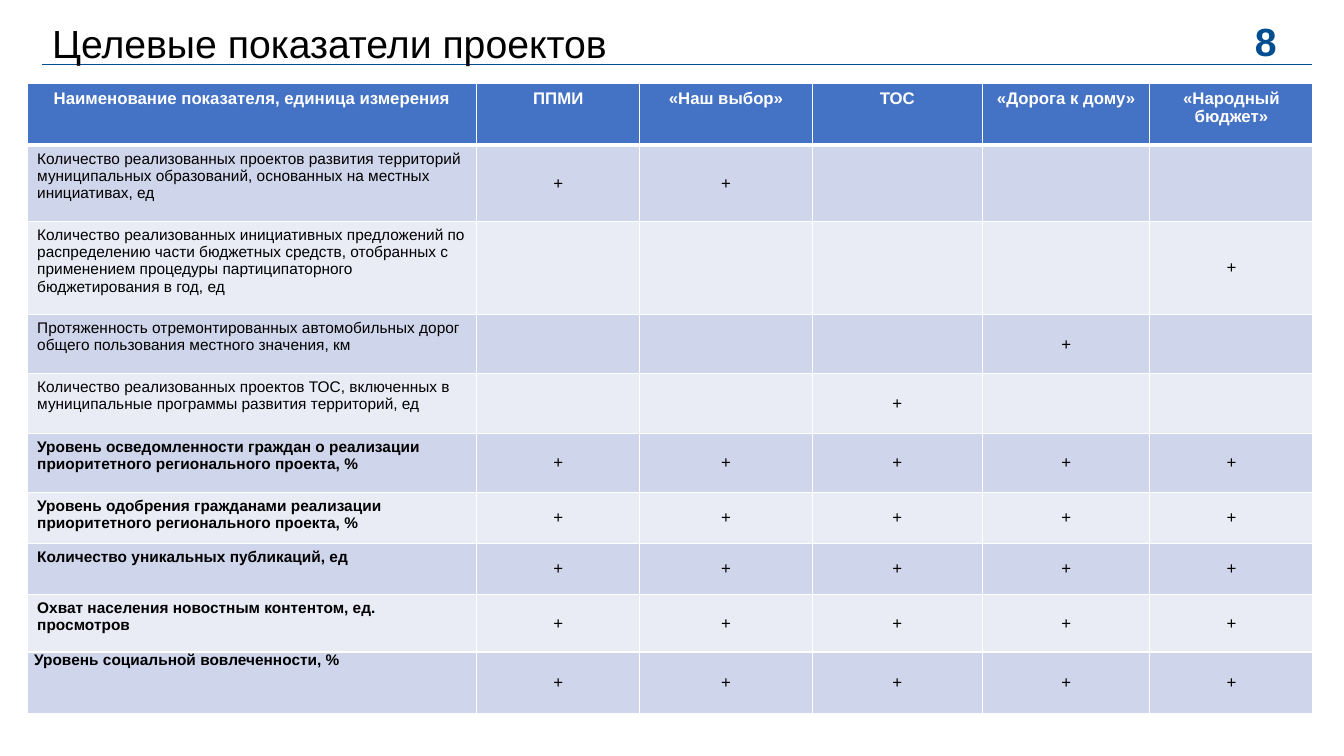
from lxml.etree import SubElement
from pptx import Presentation
from pptx.dml.color import RGBColor
from pptx.enum.shapes import MSO_CONNECTOR
from pptx.enum.text import MSO_ANCHOR, PP_ALIGN
from pptx.oxml import parse_xml
from pptx.oxml.ns import nsdecls, qn
from pptx.util import Pt

FONT = "Arial"
NAVY, BLACK, WHITE = "004E90", "000000", "FFFFFF"
HEADER_FILL = "4472C4"
BAND_FILLS = ["CFD5EA", "E9EBF5"]
COL_WIDTHS = [321.1, 116.6, 123.1, 121.7, 119.5, 116.6]
ROW_HEIGHTS = [43.9, 54.7, 66.2, 42.5, 42.5, 42.5, 36, 36.7, 41, 43.9]
HEADERS = ["Наименование показателя, единица измерения", "ППМИ", "«Наш выбор»",
           "ТОС", "«Дорога к дому»", "«Народный бюджет»"]
ALL_PROJECTS = "+++++"
INDICATORS = [
    ("Количество реализованных проектов развития территорий муниципальных "
     "образований, основанных на местных инициативах, ед", "++---"),
    ("Количество реализованных инициативных предложений по распределению части "
     "бюджетных средств, отобранных с применением процедуры партиципаторного "
     "бюджетирования в год, ед", "----+"),
    ("Протяженность отремонтированных автомобильных дорог общего пользования "
     "местного значения, км", "---+-"),
    ("Количество реализованных проектов ТОС, включенных в муниципальные "
     "программы развития территорий, ед", "--+--"),
    ("Уровень осведомленности граждан о реализации приоритетного регионального "
     "проекта, %", ALL_PROJECTS),
    ("Уровень одобрения гражданами реализации приоритетного регионального "
     "проекта, %", ALL_PROJECTS),
    ("Количество уникальных публикаций, ед", ALL_PROJECTS),
    ("Охват населения новостным контентом, ед. просмотров", ALL_PROJECTS),
    ("Уровень социальной вовлеченности, %", ALL_PROJECTS),
]


def color(value):
    return RGBColor.from_string(value)


def write(p, text, size, font_color, bold=False, align=PP_ALIGN.LEFT):
    p.text = text
    p.alignment = align
    p.font.name = FONT
    p.font.size = Pt(size)
    p.font.bold = bold
    p.font.color.rgb = color(font_color)


def add_text(s, left, top, width, height, text, font_color, bold=False):
    tf = s.shapes.add_textbox(Pt(left), Pt(top), Pt(width), Pt(height)).text_frame
    tf.word_wrap = True
    tf.vertical_anchor = MSO_ANCHOR.MIDDLE
    p = tf.paragraphs[0]
    write(p, text, 28, font_color, bold)
    p.line_spacing = 0.9


def add_rule(s, left, right, y):
    line = s.shapes.add_connector(MSO_CONNECTOR.STRAIGHT, Pt(left), Pt(y), Pt(right), Pt(y))
    line.line.color.rgb = color(NAVY)
    line.line.width = Pt(1)
    SubElement(line._element.spPr, qn("a:effectLst"))


def set_borders(cell, top=1, bottom=1):
    tcPr = cell._tc.get_or_add_tcPr()
    widths = {"lnL": 1, "lnR": 1, "lnT": top, "lnB": bottom}
    for i, (side, width) in enumerate(widths.items()):
        tcPr.insert(i, parse_xml(
            f'<a:{side} {nsdecls("a")} w="{Pt(width)}"><a:solidFill>'
            f'<a:srgbClr val="{WHITE}"/></a:solidFill></a:{side}>'))


def fill_cell(cell, fill):
    cell.fill.solid()
    cell.fill.fore_color.rgb = color(fill)


def add_indicator_table(s, left, top):
    table = s.shapes.add_table(len(ROW_HEIGHTS), len(COL_WIDTHS), Pt(left), Pt(top),
                               Pt(sum(COL_WIDTHS)), Pt(sum(ROW_HEIGHTS))).table
    for column, width in zip(table.columns, COL_WIDTHS):
        column.width = Pt(width)
    for row, height in zip(table.rows, ROW_HEIGHTS):
        row.height = Pt(height)

    for cell, header in zip(table.rows[0].cells, HEADERS):
        fill_cell(cell, HEADER_FILL)
        set_borders(cell, bottom=3)
        write(cell.text_frame.paragraphs[0], header, 12, WHITE, True, PP_ALIGN.CENTER)

    for i, (name, marks) in enumerate(INDICATORS):
        cells = list(table.rows[i + 1].cells)
        for cell in cells:
            fill_cell(cell, BAND_FILLS[i % 2])
            set_borders(cell, top=3 if i == 0 else 1)
        write(cells[0].text_frame.paragraphs[0], name, 11, BLACK, marks == ALL_PROJECTS)
        for cell, mark in zip(cells[1:], marks):
            cell.vertical_anchor = MSO_ANCHOR.MIDDLE
            if mark == "+":
                write(cell.text_frame.paragraphs[0], mark, 12, BLACK, align=PP_ALIGN.CENTER)

    last_name = table.cell(len(INDICATORS), 0)
    last_name.margin_left = last_name.margin_right = Pt(5)
    last_name.margin_top = last_name.margin_bottom = Pt(0)


def main():
    prs = Presentation()
    prs.slide_width, prs.slide_height = Pt(960), Pt(540)
    s = prs.slides.add_slide(prs.slide_layouts[6])
    add_text(s, 889.2, 20.9, 49, 20.9, "8", NAVY, True)
    add_rule(s, 30.2, 937.4, 46.1)
    add_text(s, 30.2, 23.8, 710, 18, "Целевые показатели проектов", BLACK)
    add_indicator_table(s, 19.4, 59.8)
    prs.save("out.pptx")


if __name__ == "__main__":
    main()
